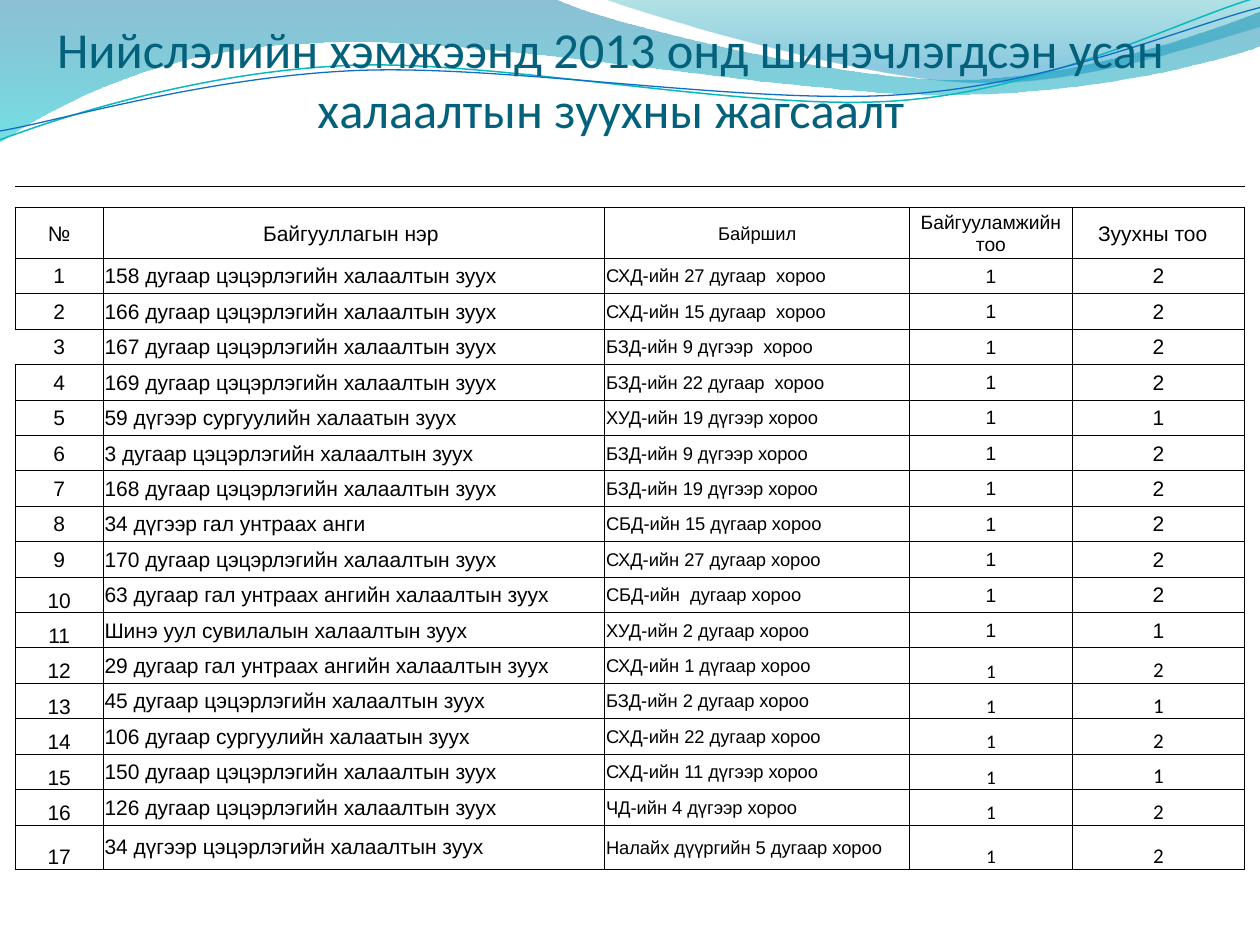
import pptx
import pptx.util
import pptx.dml.color
import pptx.enum.text
import pptx.oxml.ns
import lxml.etree

Inches = pptx.util.Inches
Pt = pptx.util.Pt
ALIGN = pptx.enum.text.PP_ALIGN
ANCHOR = pptx.enum.text.MSO_ANCHOR
qn = pptx.oxml.ns.qn

TITLE = "Нийслэлийн хэмжээнд 2013 онд шинэчлэгдсэн усан халаалтын зуухны жагсаалт"
HEADS = ["№", "Байгууллагын нэр", "Байршил", "Байгууламжийн тоо", "Зуухны тоо"]
KINDER = "дугаар цэцэрлэгийн халаалтын зуух"
FIRE = "дугаар гал унтраах ангийн халаалтын зуух"
SITES = [
    (f"158 {KINDER}", "СХД-ийн 27 дугаар  хороо", 2),
    (f"166 {KINDER}", "СХД-ийн 15 дугаар  хороо", 2),
    (f"167 {KINDER}", "БЗД-ийн 9 дүгээр  хороо", 2),
    (f"169 {KINDER}", "БЗД-ийн 22 дугаар  хороо", 2),
    ("59 дүгээр сургуулийн халаатын зуух", "ХУД-ийн 19 дүгээр хороо", 1),
    (f"3 {KINDER}", "БЗД-ийн 9 дүгээр хороо", 2),
    (f"168 {KINDER}", "БЗД-ийн 19 дүгээр хороо", 2),
    ("34 дүгээр гал унтраах анги", "СБД-ийн 15 дүгаар хороо", 2),
    (f"170 {KINDER}", "СХД-ийн 27 дугаар хороо", 2),
    (f"63 {FIRE}", "СБД-ийн  дугаар хороо", 2),
    ("Шинэ уул сувилалын халаалтын зуух", "ХУД-ийн 2 дугаар хороо", 1),
    (f"29 {FIRE}", "СХД-ийн 1 дүгаар хороо", 2),
    (f"45 {KINDER}", "БЗД-ийн 2 дугаар хороо", 1),
    ("106 дугаар сургуулийн халаатын зуух", "СХД-ийн 22 дугаар хороо", 2),
    (f"150 {KINDER}", "СХД-ийн 11 дүгээр хороо", 1),
    (f"126 {KINDER}", "ЧД-ийн 4 дүгээр хороо", 2),
    ("34 дүгээр цэцэрлэгийн халаалтын зуух", "Налайх дүүргийн 5 дугаар хороо", 2),
]
WIDTHS = [0.7, 3.98, 2.42, 1.29, 1.37]
TOPS = [0.33, 0.17, 0.4]
LAST = 0.35
SIZES = [12, 12, 10.5, 11, 12]
SHIFTS = [0.01, 0.06, 0.01, 0.01, 0.1]

BANDS = [
    ([(0, 0), (4.4, -0.01),
      [(4.76, 0.17), (6.64, 0.63), (7.58, 0.63)],
      [(8.53, 0.63), (9.58, 0.26), (10, 0.09)], (10.01, 0.36),
      [(9.83, 0.44), (8.7, 0.76), (7.46, 0.75)],
      [(6.22, 0.75), (3.82, 0.28), (2.57, 0.34)],
      [(1.29, 0.36), (0.46, 0.83), (-0.01, 1.13)], (0, 0)],
     [(0, "0074A1", 45), (1, "00C6CF", 55)]),
    ([(4.79, -0.01),
      [(5.09, 0.11), (6.82, 0.62), (7.69, 0.65)],
      [(8.56, 0.69), (9.61, 0.32), (10, 0.21)], (10, 0), (4.79, -0.01)],
     [(0, "00A1A9", 30), (0.8, "008BBF", 45)]),
]
STROKES = [
    ([(0, 1.11),
      [(0.48, 0.93), (1.58, 0.57), (2.77, 0.52)],
      [(3.95, 0.47), (5.93, 0.89), (7.13, 0.8)],
      [(8.33, 0.71), (9.38, 0.15), (9.98, -0.02)]], "0AB8BF", 0.85),
    ([(0, 1.04),
      [(0.47, 0.96), (1.64, 0.61), (2.83, 0.56)],
      [(4.03, 0.51), (5.97, 0.84), (7.17, 0.75)],
      [(8.36, 0.67), (9.41, 0.21), (10, 0.06)]], "0F6FC6", 0.75),
]


def tint(code):
    return pptx.dml.color.RGBColor.from_string(code)


def outline(slide, left, top, steps, close):
    ends = [step[-1] if isinstance(step, list) else step for step in steps]
    points = [(left + Inches(x), top + Inches(y)) for x, y in ends]
    pen = slide.shapes.build_freeform(*points[0])
    pen.add_line_segments(points[1:], close=close)
    shape = pen.convert_to_shape()
    shape.shadow.inherit = False
    lines = list(shape.element.spPr.iter(qn("a:lnTo")))
    for line, step in zip(lines, steps[1:]):
        if isinstance(step, list):
            curve = lxml.etree.Element(qn("a:cubicBezTo"))
            for x, y in step:
                lxml.etree.SubElement(curve, qn("a:pt"),
                                      x=str(left + Inches(x) - shape.left),
                                      y=str(top + Inches(y) - shape.top))
            line.getparent().replace(line, curve)
    return shape


def add_waves(slide, left, top):
    for steps, stops in BANDS:
        band = outline(slide, left, top, steps, True)
        band.line.fill.background()
        band.fill.gradient()
        band.fill.gradient_angle = 270
        for stop, (place, code, _) in zip(band.fill.gradient_stops, stops):
            stop.position = place
            stop.color.rgb = tint(code)
        marks = band.element.spPr.iter(qn("a:srgbClr"))
        for mark, (_, _, alpha) in zip(list(marks), stops):
            lxml.etree.SubElement(mark, qn("a:alpha"), val=str(alpha * 1000))
    for steps, code, width in STROKES:
        stroke = outline(slide, left, top, steps, False)
        stroke.fill.background()
        stroke.line.color.rgb = tint(code)
        stroke.line.width = Pt(width)


def style(para, size, face, code, align):
    para.alignment = align
    for run in para.runs:
        run.font.size = Pt(size)
        run.font.name = face
        run.font.color.rgb = tint(code)


def add_title(slide, left, top, width, height):
    frame = slide.shapes.add_textbox(left, top, width, height).text_frame
    frame.word_wrap = True
    frame.vertical_anchor = ANCHOR.BOTTOM
    frame.margin_left = frame.margin_right = frame.margin_bottom = 0
    frame.margin_top = Inches(0.05)
    frame.text = TITLE
    style(frame.paragraphs[0], 28.8, "Calibri", "04617B", ALIGN.CENTER)


def border(cell, sides):
    props = cell._tc.get_or_add_tcPr()
    for spot, side in enumerate("LRTB"):
        edge = lxml.etree.Element(qn(f"a:ln{side}"), w=str(Pt(0.5)))
        if side in sides:
            paint = lxml.etree.SubElement(edge, qn("a:solidFill"))
            lxml.etree.SubElement(paint, qn("a:srgbClr"), val="000000")
        else:
            lxml.etree.SubElement(edge, qn("a:noFill"))
        props.insert(spot, edge)


def is_white(num, col):
    names = (5, 8, 10, 12, 14)
    return [num == 8, num in names, num >= 5, 8 <= num <= 11, 8 <= num <= 11][col]


def fill_cell(cell, text, num, col):
    cell.margin_left = cell.margin_top = Inches(0.01)
    cell.margin_right = Inches(SHIFTS[col] if num == 0 else 0.01)
    cell.margin_bottom = 0
    low = (col == 0 and num >= 10) or (col >= 3 and num >= 12)
    cell.vertical_anchor = ANCHOR.BOTTOM if low else ANCHOR.MIDDLE
    if is_white(num, col):
        cell.fill.solid()
        cell.fill.fore_color.rgb = tint("FFFFFF")
    else:
        cell.fill.background()
    para = cell.text_frame.paragraphs[0]
    if text:
        para.text = text
        face = "Calibri" if low and col >= 3 else "Arial"
        side = ALIGN.LEFT if num > 0 and col in (1, 2) else ALIGN.CENTER
        style(para, SIZES[col], face, "000000", side)
    else:
        lxml.etree.SubElement(para._p, qn("a:endParaRPr"), sz="600")


def add_list(slide, left, top, width, height):
    body = [[str(i), name, place, "1", str(count)]
            for i, (name, place, count) in enumerate(SITES, 1)]
    rows = [[""] * 5, [""] * 5, HEADS, *body]
    table = slide.shapes.add_table(len(rows), 5, left, top, width, height).table
    table.first_row = table.horz_banding = False
    for column, size in zip(table.columns, WIDTHS):
        column.width = Inches(size)
    even = (height.inches - sum(TOPS) - LAST) / (len(SITES) - 1)
    heights = TOPS + [even] * (len(SITES) - 1) + [LAST]
    for row, size in zip(table.rows, heights):
        row.height = Inches(size)
    for r, texts in enumerate(rows):
        num = r - 2
        for col, text in enumerate(texts):
            cell = table.cell(r, col)
            fill_cell(cell, text, num, col)
            open_left = num == 3 and col == 0
            sides = {0: "B", 1: "TB"}.get(r, "RTB" if open_left else "LRTB")
            border(cell, sides)
    table.cell(0, 0).merge(table.cell(0, 4))


def main():
    deck = pptx.Presentation()
    deck.slide_width = Inches(10)
    deck.slide_height = Inches(7.5)
    slide = deck.slides.add_slide(deck.slide_layouts[6])
    add_waves(slide, Inches(0), Inches(0))
    add_title(slide, Inches(0.35), Inches(0), Inches(9), Inches(1.1))
    add_list(slide, Inches(0.12), Inches(1.15), Inches(9.76), Inches(5.75))
    deck.save("out.pptx")


if __name__ == "__main__":
    main()
